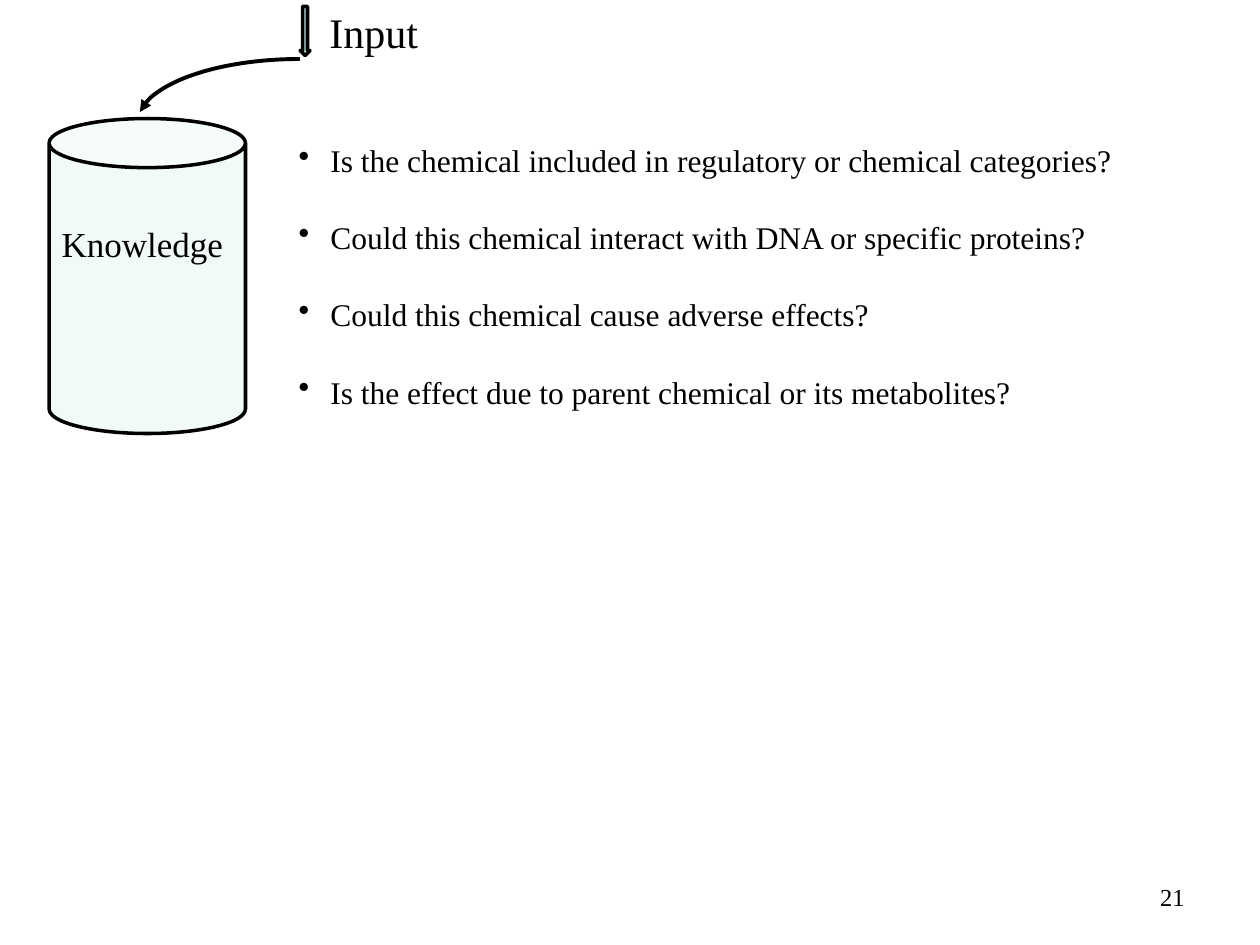
from dataclasses import dataclass

from lxml.etree import SubElement
from pptx import Presentation
from pptx.dml.color import RGBColor
from pptx.enum.shapes import MSO_SHAPE
from pptx.enum.text import MSO_ANCHOR, PP_ALIGN
from pptx.oxml.ns import qn
from pptx.util import Cm, Pt


@dataclass(frozen=True)
class Theme:
    font: str = "Times New Roman"
    ink: RGBColor = RGBColor(0x00, 0x00, 0x00)
    store: RGBColor = RGBColor(0xF1, 0xF9, 0xF9)
    arrow: RGBColor = RGBColor(0xBB, 0xE0, 0xE3)
    heading: float = 24
    label: float = 20
    body: float = 18
    number: float = 14
    question_gap: float = 22.5


THEME = Theme()
INDENT = Cm(0.64)

QUESTIONS = [
    "Is the chemical included in regulatory or chemical categories?",
    "Could this chemical interact with DNA or specific proteins?",
    "Could this chemical cause adverse effects?",
    "Is the effect due to parent chemical or its metabolites?",
]

# Left, top, width, height in centimetres
STORE = (0.99, 2.39, 3.96, 6.35)
FLOW = (2.77, 1.19, 6.55, 2.59)
INPUT_ARROW = (6.05, 0.13, 0.2, 0.99)
QUESTION_BOX = (5.77, 2.74, 17.27, 5.64)

# Text, box, size, alignment, wrap
LABELS = [
    ("Knowledge", (0.99, 4.37, 3.76, 1.88), THEME.label, PP_ALIGN.CENTER, False),
    ("Input", (6.38, 0, 2.31, 1.3), THEME.heading, PP_ALIGN.CENTER, False),
    ("21", (18.21, 17.65, 5.92, 1.02), THEME.number, PP_ALIGN.RIGHT, True),
]


def add_outline(slide, kind, box, width, fill=None):
    sp = slide.shapes.add_shape(kind, *map(Cm, box))
    sp.shadow.inherit = False
    if fill is None:
        sp.fill.background()
    else:
        sp.fill.solid()
        sp.fill.fore_color.rgb = fill
    sp.line.color.rgb = THEME.ink
    sp.line.width = Pt(width)
    return sp


def add_frame(slide, box, wrap=True):
    tf = slide.shapes.add_textbox(*map(Cm, box)).text_frame
    tf.word_wrap = wrap
    return tf


def add_text(p, text, size, align):
    p.alignment = align
    r = p.add_run()
    r.text = text
    r.font.name = THEME.font
    r.font.size = Pt(size)
    r.font.color.rgb = THEME.ink


def add_bullet(p):
    pPr = p._p.get_or_add_pPr()
    pPr.set("marL", str(INDENT))
    pPr.set("indent", str(-INDENT))
    SubElement(pPr, qn("a:buChar"), char="•")


def add_flow(slide):
    """Draw the curved arrow that leads from the input into the store."""
    sp = add_outline(slide, MSO_SHAPE.ARC, FLOW, 2.25)
    # Sixty-thousandths of a degree, scaled by 100,000: 270 to 356 degrees
    sp.adjustments[0] = 162
    sp.adjustments[1] = 213.61
    sp._element.spPr.find(qn("a:xfrm")).set("flipH", "1")
    SubElement(sp.line._get_or_add_ln(), qn("a:tailEnd"), type="triangle")


def add_questions(slide):
    tf = add_frame(slide, QUESTION_BOX)
    tf.vertical_anchor = MSO_ANCHOR.MIDDLE
    for i, question in enumerate(QUESTIONS):
        p = tf.add_paragraph() if i else tf.paragraphs[0]
        add_bullet(p)
        if i:
            p.space_before = Pt(THEME.question_gap)
        add_text(p, question, THEME.body, PP_ALIGN.JUSTIFY)


def main():
    prs = Presentation()
    prs.slide_width, prs.slide_height = Cm(25.4), Cm(19.05)
    slide = prs.slides.add_slide(prs.slide_layouts[6])

    add_outline(slide, MSO_SHAPE.CAN, STORE, 2, THEME.store)
    add_flow(slide)
    add_outline(slide, MSO_SHAPE.DOWN_ARROW, INPUT_ARROW, 2, THEME.arrow)
    add_questions(slide)
    for text, box, size, align, wrap in LABELS:
        tf = add_frame(slide, box, wrap)
        add_text(tf.paragraphs[0], text, size, align)

    prs.save("out.pptx")


if __name__ == "__main__":
    main()
